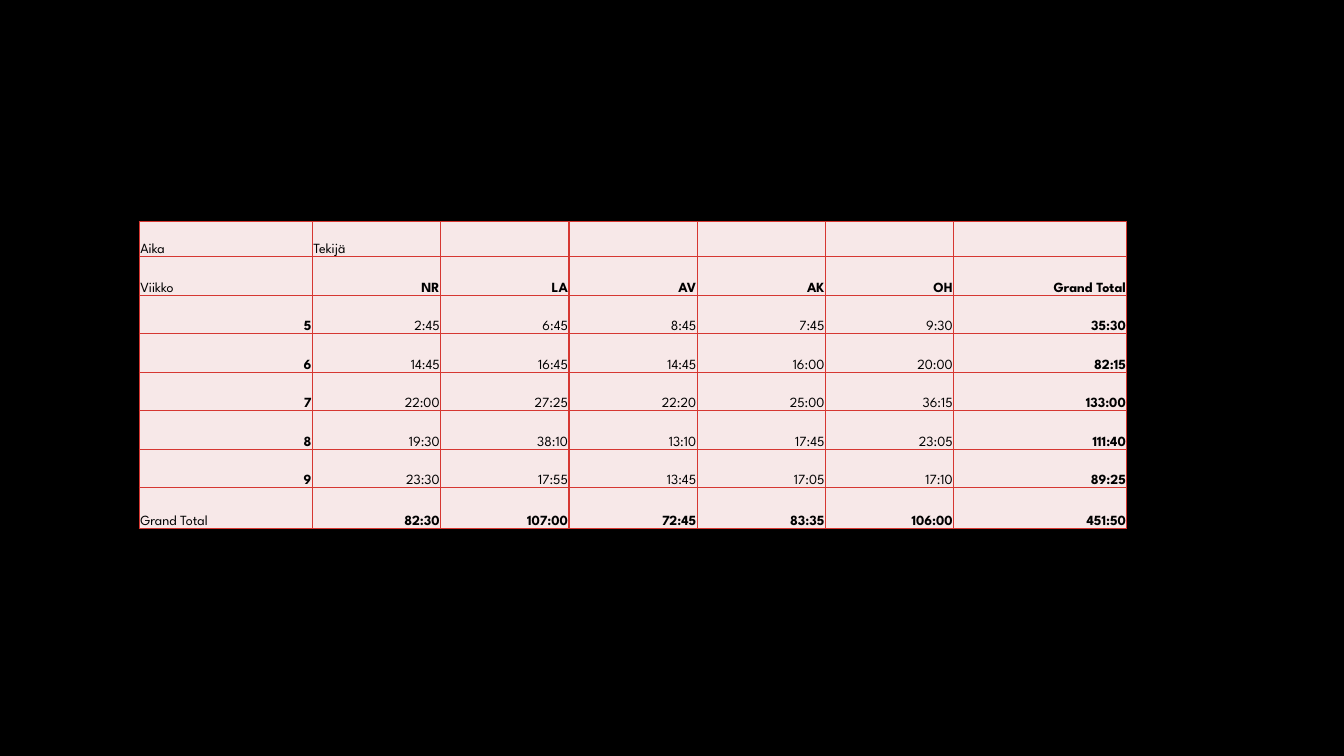
from lxml.etree import SubElement
from pptx import Presentation
from pptx.dml.color import RGBColor
from pptx.enum.text import MSO_ANCHOR, PP_ALIGN
from pptx.oxml.ns import qn
from pptx.util import Pt

BLACK = RGBColor(0x00, 0x00, 0x00)
BLUSH = RGBColor(0xF7, 0xE8, 0xE8)
RED = RGBColor(0xD6, 0x37, 0x31)
FONT = "League Spartan"

HOURS = [
    ["Aika", "Tekijä", "", "", "", "", ""],
    ["Viikko", "NR", "LA", "AV", "AK", "OH", "Grand Total"],
    ["5", "2:45", "6:45", "8:45", "7:45", "9:30", "35:30"],
    ["6", "14:45", "16:45", "14:45", "16:00", "20:00", "82:15"],
    ["7", "22:00", "27:25", "22:20", "25:00", "36:15", "133:00"],
    ["8", "19:30", "38:10", "13:10", "17:45", "23:05", "111:40"],
    ["9", "23:30", "17:55", "13:45", "17:05", "17:10", "89:25"],
    ["Grand Total", "82:30", "107:00", "72:45", "83:35", "106:00", "451:50"],
]
LAST_ROW = len(HOURS) - 1
LAST_COLUMN = len(HOURS[0]) - 1
TOTAL_WIDTH_SHARE = 0.1753
TOP_ROW_HEIGHT, BOTTOM_ROW_HEIGHT = 25, 29


def add_borders(cell):
    """Draw a thin red line on all four sides of a cell."""
    properties = cell._tc.get_or_add_tcPr()
    for side in ("a:lnL", "a:lnR", "a:lnT", "a:lnB"):
        border = SubElement(properties, qn(side), w=str(Pt(1)))
        border_fill = SubElement(border, qn("a:solidFill"))
        SubElement(border_fill, qn("a:srgbClr"), val=str(RED))


def fill_cell(cell, entry, row, column):
    """Style one cell and write its entry by its role in the timesheet."""
    add_borders(cell)
    cell.fill.solid()
    cell.fill.fore_color.rgb = BLUSH
    cell.vertical_anchor = MSO_ANCHOR.BOTTOM
    cell.margin_left = cell.margin_right = cell.margin_top = Pt(0.75)
    cell.margin_bottom = 0
    is_label = row == 0 or (column == 0 and row in (1, LAST_ROW))
    is_edge = row in (1, LAST_ROW) or column in (0, LAST_COLUMN)
    paragraph = cell.text_frame.paragraphs[0]
    paragraph.alignment = PP_ALIGN.LEFT if is_label else PP_ALIGN.RIGHT
    paragraph.font.size = Pt(10)
    if entry:
        run = paragraph.add_run()
        run.text = entry
        run.font.name = FONT
        run.font.size = Pt(10)
        run.font.bold = is_edge and not is_label
        run.font.color.rgb = BLACK


def add_timesheet(slide, left, top, width, height):
    """Add the table of weekly hours per person inside the given box."""
    timesheet = slide.shapes.add_table(
        len(HOURS), len(HOURS[0]), Pt(left), Pt(top), Pt(width), Pt(height)
    ).table
    timesheet.first_row = timesheet.horz_banding = False
    outer_width = width * TOTAL_WIDTH_SHARE
    person_width = (width - 2 * outer_width) / (LAST_COLUMN - 1)
    for index, column in enumerate(timesheet.columns):
        column.width = Pt(outer_width if index in (0, LAST_COLUMN) else person_width)
    inner_height = (height - TOP_ROW_HEIGHT - BOTTOM_ROW_HEIGHT) / (LAST_ROW - 1)
    special_heights = {0: TOP_ROW_HEIGHT, LAST_ROW: BOTTOM_ROW_HEIGHT}
    for index, row in enumerate(timesheet.rows):
        row.height = Pt(special_heights.get(index, inner_height))
        for column, entry in enumerate(HOURS[index]):
            fill_cell(timesheet.cell(index, column), entry, index, column)


def main():
    """Build and save the timesheet slide."""
    presentation = Presentation()
    presentation.slide_width = Pt(960)
    presentation.slide_height = Pt(540)
    slide = presentation.slides.add_slide(presentation.slide_layouts[6])
    slide.background.fill.solid()
    slide.background.fill.fore_color.rgb = BLACK
    add_timesheet(slide, 99.5, 158.4, 705.5, 219)
    presentation.save("out.pptx")


if __name__ == "__main__":
    main()
